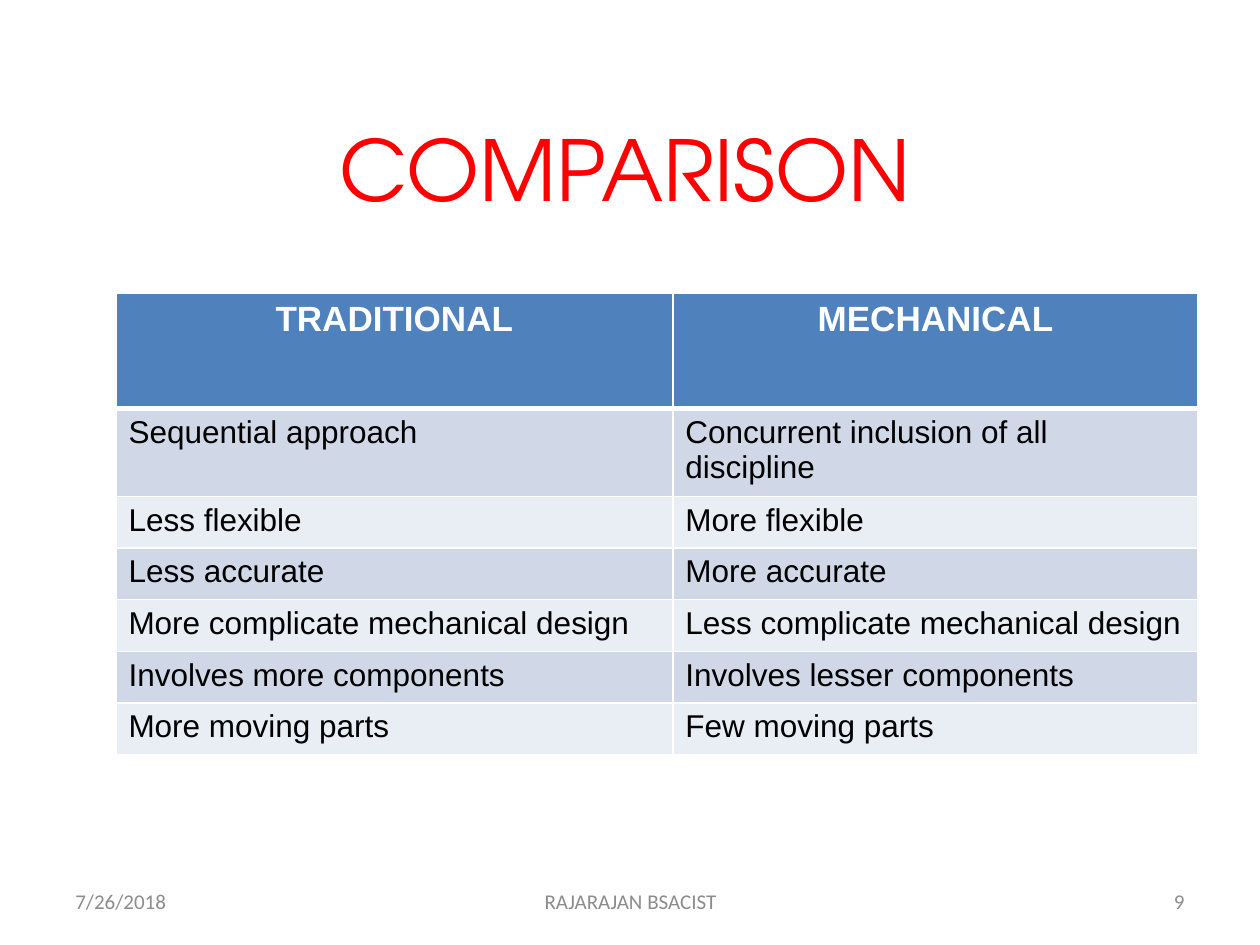
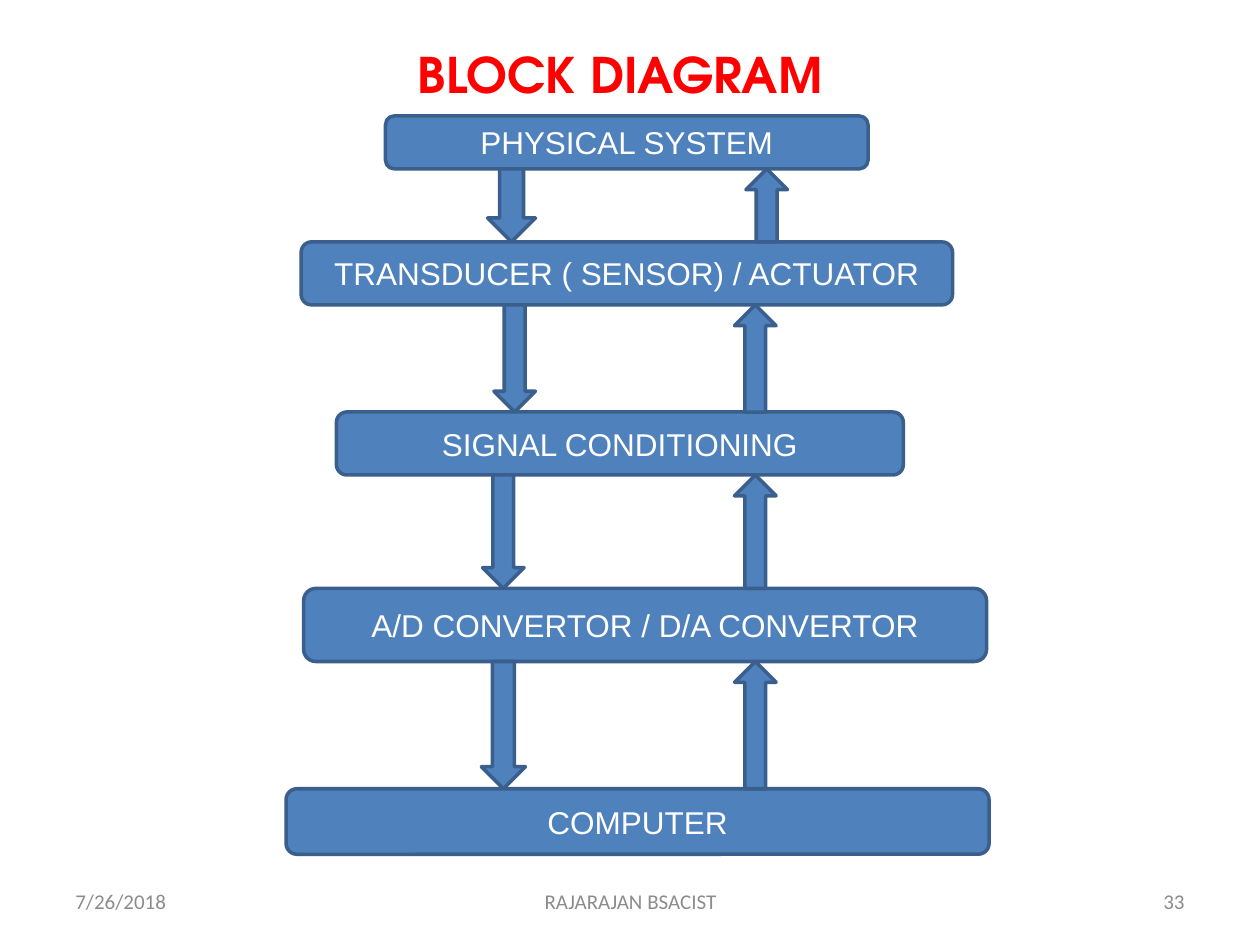
from lxml.etree import SubElement
from pptx import Presentation
from pptx.dml.color import RGBColor
from pptx.enum.shapes import MSO_SHAPE as SHAPE
from pptx.enum.text import MSO_ANCHOR as ANCHOR, PP_ALIGN as ALIGN
from pptx.oxml.ns import qn
from pptx.util import Inches, Pt

COLORS = {
    "title": "FF0000", "blue": "4F81BD", "edge": "3A5F8C", "white": "FFFFFF",
    "text": "000000", "odd": "D0D8E8", "even": "E9EDF4", "foot": "8C8C8C",
}
HEAD_FONT, BODY_FONT, FOOT_FONT = "TeX Gyre Adventor", "Arial", "Calibri"

DATE, AUTHOR = "7/26/2018", "RAJARAJAN BSACIST"
FOOT_TOP, FOOT_HIGH = 6.95, 0.4

ROWS = [
    ("TRADITIONAL", "MECHANICAL"),
    ("Sequential approach", "Concurrent inclusion of all discipline"),
    ("Less flexible", "More flexible"),
    ("Less accurate", "More accurate"),
    ("More complicate mechanical design", "Less complicate mechanical design"),
    ("Involves more components", "Involves lesser components"),
    ("More moving parts", "Few moving parts"),
]
COL_WIDTHS = (4.42, 4.17)
HEAD_HIGH, ROW_HIGH = 0.91, 0.41

# Blocks from top to bottom: text, left, top, width, height
BLOCKS = [
    ("PHYSICAL SYSTEM", 3.06, 0.92, 3.83, 0.42),
    ("TRANSDUCER ( SENSOR) / ACTUATOR", 2.39, 1.92, 5.17, 0.5),
    ("SIGNAL CONDITIONING", 2.67, 3.27, 4.5, 0.5),
    ("A/D CONVERTOR / D/A CONVERTOR", 2.41, 4.67, 5.42, 0.58),
    ("COMPUTER", 2.27, 6.26, 5.58, 0.52),
]
# Left and width of the arrows in each gap between blocks
DOWN = [(3.87, 0.38), (3.92, 0.33), (3.83, 0.33), (3.82, 0.35)]
UP = [(5.92, 0.33), (5.83, 0.33), (5.83, 0.33), (5.83, 0.33)]


def rgb(name):
    return RGBColor.from_string(COLORS[name])


def box(*sizes):
    return [Inches(size) for size in sizes]


def write(frame, text, font, size, color, align=ALIGN.CENTER, bold=False):
    frame.text = text
    frame.word_wrap = True
    frame.vertical_anchor = ANCHOR.MIDDLE
    style(frame.paragraphs[0], font, size, color, align, bold)


def style(para, font, size, color, align, bold):
    para.alignment = align
    face = para.runs[0].font
    face.name, face.size, face.bold = font, Pt(size), bold
    face.color.rgb = rgb(color)


def add_page(deck, title, place, size, number, bold=False):
    """Add a slide with its title and footer."""
    slide = deck.slides.add_slide(deck.slide_layouts[5])
    head = slide.shapes.title
    head.left, head.top, head.width, head.height = box(*place)
    write(head.text_frame, title, HEAD_FONT, size, "title", bold=bold)
    for text, left, width, align in (
        (DATE, 0.5, 2.33, ALIGN.LEFT),
        (AUTHOR, 3.42, 3.17, ALIGN.CENTER),
        (str(number), 7.17, 2.33, ALIGN.RIGHT),
    ):
        foot = slide.shapes.add_textbox(*box(left, FOOT_TOP, width, FOOT_HIGH))
        write(foot.text_frame, text, FOOT_FONT, 12, "foot", align)
    return slide


def set_border(cell, side, points):
    props = cell._tc.get_or_add_tcPr()
    line = SubElement(props, qn(f"a:ln{side}"), w=str(Pt(points)))
    fill = SubElement(line, qn("a:solidFill"))
    SubElement(fill, qn("a:srgbClr"), val=COLORS["white"])


def add_grid(slide):
    high = HEAD_HIGH + ROW_HIGH * (len(ROWS) - 1)
    place = box(0.92, 2.33, sum(COL_WIDTHS), high)
    table = slide.shapes.add_table(len(ROWS), len(COL_WIDTHS), *place).table
    for col, width in zip(table.columns, COL_WIDTHS):
        col.width = Inches(width)
    for r, row in enumerate(ROWS):
        head = r == 0
        table.rows[r].height = Inches(HEAD_HIGH if head else ROW_HIGH)
        shade = "blue" if head else ("even", "odd")[r % 2]
        for c, text in enumerate(row):
            cell = table.cell(r, c)
            thick = {"L": 1, "R": 1, "T": 3 if r == 1 else 1, "B": 3 if head else 1}
            for side, points in thick.items():
                set_border(cell, side, points)
            cell.fill.solid()
            cell.fill.fore_color.rgb = rgb(shade)
            cell.text_frame.text = text
            style(cell.text_frame.paragraphs[0], BODY_FONT, 20 if head else 18,
                  "white" if head else "text",
                  ALIGN.CENTER if head else ALIGN.LEFT, head)


def add_solid(slide, kind, *place):
    """Add a blue shape with a darker edge."""
    shape = slide.shapes.add_shape(kind, *box(*place))
    shape.shadow.inherit = False
    shape.fill.solid()
    shape.fill.fore_color.rgb = rgb("blue")
    shape.line.color.rgb = rgb("edge")
    shape.line.width = Pt(2)
    return shape


def add_blocks(slide):
    for text, *place in BLOCKS:
        block = add_solid(slide, SHAPE.ROUNDED_RECTANGLE, *place)
        write(block.text_frame, text, BODY_FONT, 18, "white")
    for kind, arrows in ((SHAPE.DOWN_ARROW, DOWN), (SHAPE.UP_ARROW, UP)):
        for upper, lower, (left, width) in zip(BLOCKS, BLOCKS[1:], arrows):
            top = upper[2] + upper[4]
            add_solid(slide, kind, left, top, width, lower[2] - top)


def main():
    deck = Presentation()
    deck.slide_width, deck.slide_height = box(10, 7.5)
    add_grid(add_page(deck, "COMPARISON", (-0.58, 1.21, 11.08, 0.25), 48, 9))
    add_blocks(add_page(deck, "BLOCK DIAGRAM", (0.42, 0, 9, 1.17), 28, 33, True))
    deck.save("out.pptx")


if __name__ == "__main__":
    main()
